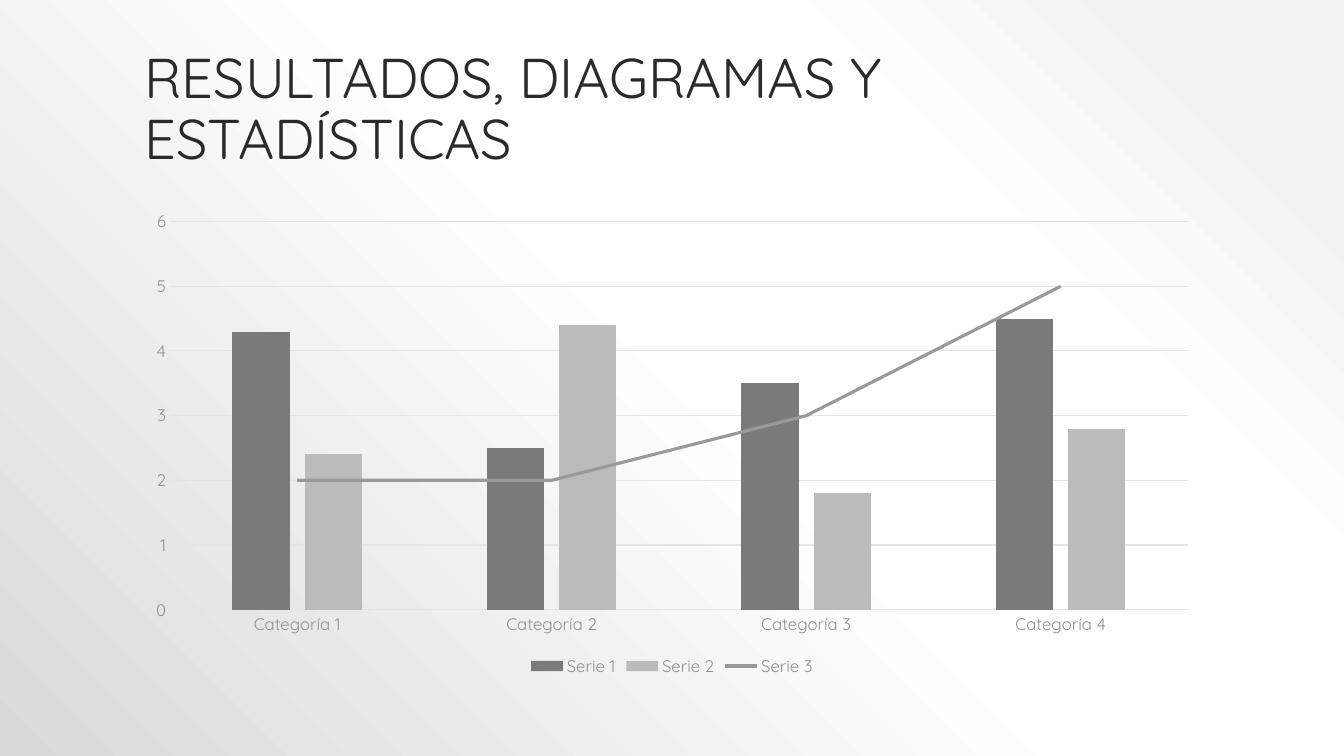
from pptx import Presentation
from pptx.chart.data import CategoryChartData
from pptx.dml.color import RGBColor
from pptx.enum.chart import XL_CHART_TYPE as ChartType, XL_LEGEND_POSITION as LegendPosition
from pptx.enum.chart import XL_MARKER_STYLE as MarkerStyle, XL_TICK_MARK as TickMark
from pptx.enum.text import MSO_ANCHOR as Anchor
from pptx.oxml import parse_xml
from pptx.oxml.ns import nsdecls, qn
from pptx.util import Cm, Pt

COLORS = {
    "title": "2A2A2A", "chart": "545454", "label": "909090", "grid": "E5E5E5",
    "Serie 1": "7A7A7A", "Serie 2": "BBBBBB", "Serie 3": "999999",
}
BACKDROP = [(10, "F2F2F2"), (28, "FFFFFF"), (48, "FFFFFF"), (100, "D9D9D9")]
CATEGORIES = [f"Categoría {number}" for number in range(1, 5)]
RESULTS = {
    "Serie 1": (4.3, 2.5, 3.5, 4.5),
    "Serie 2": (2.4, 4.4, 1.8, 2.8),
    "Serie 3": (2, 2, 3, 5),
}


def apply(target, values):
    for name, value in values.items():
        setattr(target, name, value)


class SlideBuilder:
    font = "Quicksand"
    left, width = Cm(3.39), Cm(27.09)

    def __init__(self, slide):
        self.slide = slide

    def color(self, key):
        return RGBColor.from_string(COLORS[key])

    def style_font(self, font, size, key):
        apply(font, {"name": self.font, "size": Pt(size), "bold": False})
        font.color.rgb = self.color(key)

    def style_line(self, line, width, key):
        line.width = Pt(width)
        line.color.rgb = self.color(key)

    def backdrop(self, stops):
        """Radial gradient centred on the top right corner."""
        stop_xml = "".join(
            f'<a:gs pos="{place * 1000}"><a:srgbClr val="{color}"/></a:gs>'
            for place, color in stops)
        self.slide.element.cSld.insert(0, parse_xml(
            f'<p:bg {nsdecls("p", "a")}><p:bgPr><a:gradFill rotWithShape="1">'
            f'<a:gsLst>{stop_xml}</a:gsLst><a:path path="circle">'
            '<a:fillToRect l="100000" b="100000"/></a:path></a:gradFill>'
            '<a:effectLst/></p:bgPr></p:bg>'))

    def title(self, text, top, height):
        frame = self.slide.shapes.add_textbox(self.left, top, self.width, height).text_frame
        apply(frame, {"word_wrap": True, "vertical_anchor": Anchor.BOTTOM})
        heading = frame.paragraphs[0]
        heading.line_spacing = 0.9
        run = heading.add_run()
        run.text = text
        self.style_font(run.font, 40, "title")

    def combined_chart(self, categories, results, top, height):
        """Clustered columns, with the last series as a line."""
        data = CategoryChartData()
        data.categories = categories
        for name, values in results.items():
            data.add_series(name, values)
        chart = self.slide.shapes.add_chart(
            ChartType.COLUMN_CLUSTERED, self.left, top, self.width, height, data).chart
        self.style_font(chart.font, 10, "chart")
        apply(chart, {"has_title": False, "has_legend": True})
        apply(chart.legend, {"position": LegendPosition.BOTTOM, "include_in_layout": False})
        self.style_font(chart.legend.font, 12, "label")
        self.style_axes(chart)
        self.last_series_to_line(chart)

        columns, trend = chart.plots
        apply(columns, {"gap_width": 219, "overlap": -27, "vary_by_categories": False})
        for series in columns.series:
            series.format.fill.solid()
            series.format.fill.fore_color.rgb = self.color(series.name)
        for series in trend.series:
            series.smooth = False
            series.marker.style = MarkerStyle.NONE
            self.style_line(series.format.line, 2.25, series.name)

    def style_axes(self, chart):
        for axis in (chart.category_axis, chart.value_axis):
            apply(axis, {"major_tick_mark": TickMark.NONE, "minor_tick_mark": TickMark.NONE})
            self.style_font(axis.tick_labels.font, 12, "label")
        self.style_line(chart.category_axis.format.line, 0.75, "grid")
        scale = chart.value_axis
        apply(scale, {"minimum_scale": 0, "maximum_scale": 6, "major_unit": 1,
                      "has_major_gridlines": True})
        scale.format.line.fill.background()
        self.style_line(scale.major_gridlines.format.line, 0.75, "grid")

    def last_series_to_line(self, chart):
        bars = next(chart.element.iter(qn("c:barChart")))
        series = bars.findall(qn("c:ser"))[-1]
        # A line series has no inversion setting
        for inversion in series.findall(qn("c:invertIfNegative")):
            series.remove(inversion)
        axes = "".join(f'<c:axId val="{axis.get("val")}"/>' for axis in bars.findall(qn("c:axId")))
        lines = parse_xml(
            f'<c:lineChart {nsdecls("c")}><c:grouping val="standard"/>'
            f'<c:varyColors val="0"/><c:marker val="1"/>{axes}</c:lineChart>')
        lines.insert(2, series)
        bars.addnext(lines)


def main():
    deck = Presentation()
    apply(deck, {"slide_width": Cm(33.87), "slide_height": Cm(19.05)})
    builder = SlideBuilder(deck.slides.add_slide(deck.slide_layouts[6]))

    # Background
    builder.backdrop(BACKDROP)
    # Heading
    builder.title("RESULTADOS, DIAGRAMAS Y ESTADÍSTICAS", Cm(0.76), Cm(3.68))
    # Results by category
    builder.combined_chart(CATEGORIES, RESULTS, Cm(5.08), Cm(12.07))

    deck.save("out.pptx")


if __name__ == "__main__":
    main()
